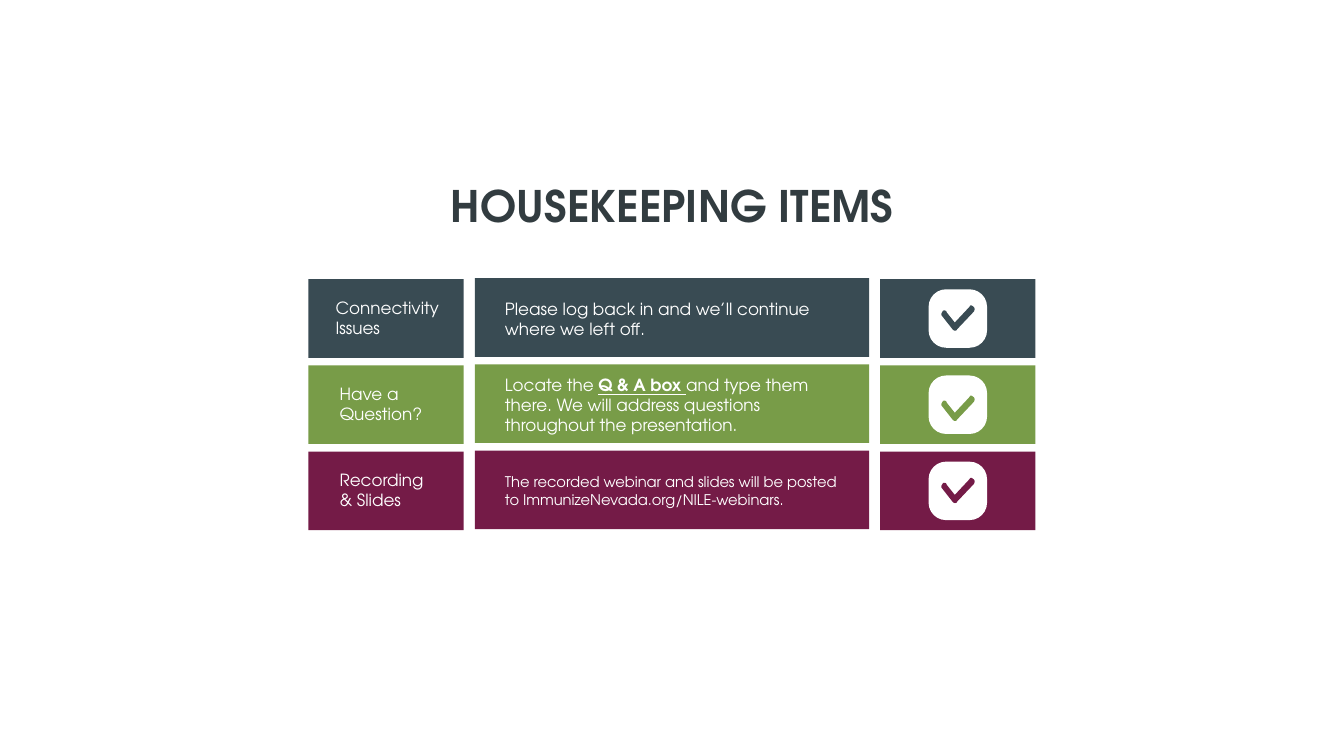
from dataclasses import dataclass

import pptx
import pptx.dml.color
import pptx.enum.shapes
import pptx.enum.text
import pptx.util

Inch = pptx.util.Inches
Kind = pptx.enum.shapes.MSO_SHAPE
Align = pptx.enum.text.PP_ALIGN


@dataclass(frozen=True)
class Theme:
    font: str = "TeX Gyre Adventor"
    ink: str = "323C40"
    white: str = "FFFFFF"
    slate: str = "394B53"
    green: str = "789C48"
    plum: str = "741B47"
    title: float = 31
    body: float = 12
    small: float = 10.5


THEME = Theme()


@dataclass(frozen=True)
class Box:
    left: float
    top: float
    width: float
    height: float

    def emu(self) -> list[int]:
        return [Inch(n) for n in (self.left, self.top, self.width, self.height)]


@dataclass(frozen=True)
class Words:
    text: str
    bold: bool = False
    under: bool = False


@dataclass(frozen=True)
class Item:
    color: str
    label: str
    body: tuple[Words, ...]
    size: float = THEME.body
    inset: float = 0.21
    room: float = 1.12
    width: float = 3.52
    tick: float = 0.26


@dataclass(frozen=True)
class Col:
    left: float
    width: float
    lift: float = 0


COLS = (Col(3.06, 1.54), Col(4.71, 3.91, 0.01), Col(8.73, 1.54))
TOP, PITCH, HIGH = 2.77, 1.71 / 2, 0.78
BADGE = 0.58

ITEMS = (
    Item(THEME.slate, "Connectivity Issues",
         (Words("Please log back in and we’ll continue where we left off."),),
         inset=0.17, room=1.29),
    Item(THEME.green, "Have a Question?",
         (Words("Locate the "), Words("Q & A box ", True, True),
          Words("and type them there. We will address questions "
                "throughout the presentation.")),
         tick=0.3),
    Item(THEME.plum, "Recording & Slides",
         (Words("The recorded webinar and slides will be posted to "
                "ImmunizeNevada.org/NILE-webinars."),),
         size=THEME.small, width=3.61),
)

# Tick outline in hundredths of an inch: pairs are lines, sixes are curves.
START = (30, 0)
TICK = (
    (29, 0, 29, 1, 28, 2), (14, 17), (6, 7),
    (6, 6, 5, 5, 4, 5), (3, 5, 2, 5, 2, 6), (1, 7, 0, 9, 1, 10), (12, 24),
    (12, 24, 13, 25, 14, 25), (15, 25, 16, 25, 16, 24), (33, 6),
    (34, 4, 34, 2, 32, 1), (32, 1, 31, 0, 30, 0),
)
FINE = 100


def rgb(color: str) -> pptx.dml.color.RGBColor:
    return pptx.dml.color.RGBColor.from_string(color)


def paint(shape, color: str) -> None:
    shape.shadow.inherit = False
    shape.fill.solid()
    shape.fill.fore_color.rgb = rgb(color)
    shape.line.fill.background()


def block(slide, box: Box, color: str, kind=Kind.RECTANGLE):
    shape = slide.shapes.add_shape(kind, *box.emu())
    paint(shape, color)
    return shape


def write(slide, box: Box, body: tuple[Words, ...], size: float,
          color: str = THEME.white, align=Align.LEFT) -> None:
    frame = slide.shapes.add_textbox(*box.emu()).text_frame
    frame.word_wrap = True
    frame.vertical_anchor = pptx.enum.text.MSO_ANCHOR.MIDDLE
    frame.margin_left = frame.margin_right = Inch(0.1)
    frame.margin_top = frame.margin_bottom = Inch(0.1)
    line = frame.paragraphs[0]
    line.alignment = align
    for words in body:
        run = line.add_run()
        run.text = words.text
        run.font.name = THEME.font
        run.font.size = pptx.util.Pt(size)
        run.font.color.rgb = rgb(color)
        run.font.bold = words.bold
        run.font.underline = words.under


def trace(steps: int = 6) -> list[tuple[float, float]]:
    """Turn the tick's lines and cubic curves into points."""
    points = [START]
    for seg in TICK:
        if len(seg) == 2:
            points.append(seg)
            continue
        (ax, ay), (bx, by, cx, cy, dx, dy) = points[-1], seg
        for step in range(1, steps + 1):
            t = step / steps
            u = 1 - t
            w = (u ** 3, 3 * u * u * t, 3 * u * t * t, t ** 3)
            points.append((
                sum(k * n for k, n in zip(w, (ax, bx, cx, dx))),
                sum(k * n for k, n in zip(w, (ay, by, cy, dy)))))
    return [(x * FINE, y * FINE) for x, y in points]


def check(slide, left: float, top: float, color: str) -> None:
    points = trace()
    pen = slide.shapes.build_freeform(*points[0], scale=Inch(0.01) / FINE)
    pen.add_line_segments(points[1:], close=True)
    paint(pen.convert_to_shape(Inch(left), Inch(top)), color)


def draw(slide, item: Item, top: float) -> None:
    for col in COLS:
        block(slide, Box(col.left, top - col.lift, col.width, HIGH), item.color)
    name, text, mark = COLS
    write(slide, Box(name.left + item.inset, top + 0.18, item.room, 0.4),
          (Words(item.label),), THEME.body)
    write(slide, Box(text.left + 0.2, top + 0.1, item.width, BADGE),
          item.body, item.size)
    left = mark.left + (mark.width - BADGE) / 2
    badge = block(slide, Box(left, top + 0.1, BADGE, BADGE), THEME.white,
                  Kind.ROUNDED_RECTANGLE)
    badge.adjustments[0] = 0.3
    check(slide, left + 0.12, top + item.tick, item.color)


def main() -> None:
    deck = pptx.Presentation()
    deck.slide_width, deck.slide_height = Inch(13.33), Inch(7.5)
    slide = deck.slides.add_slide(deck.slide_layouts[6])
    write(slide, Box(2.44, 1.77, 8.45, 0.53),
          (Words("HOUSEKEEPING ITEMS", True),), THEME.title, THEME.ink,
          Align.CENTER)
    for row, item in enumerate(ITEMS):
        draw(slide, item, TOP + row * PITCH)
    deck.save("out.pptx")


if __name__ == "__main__":
    main()
